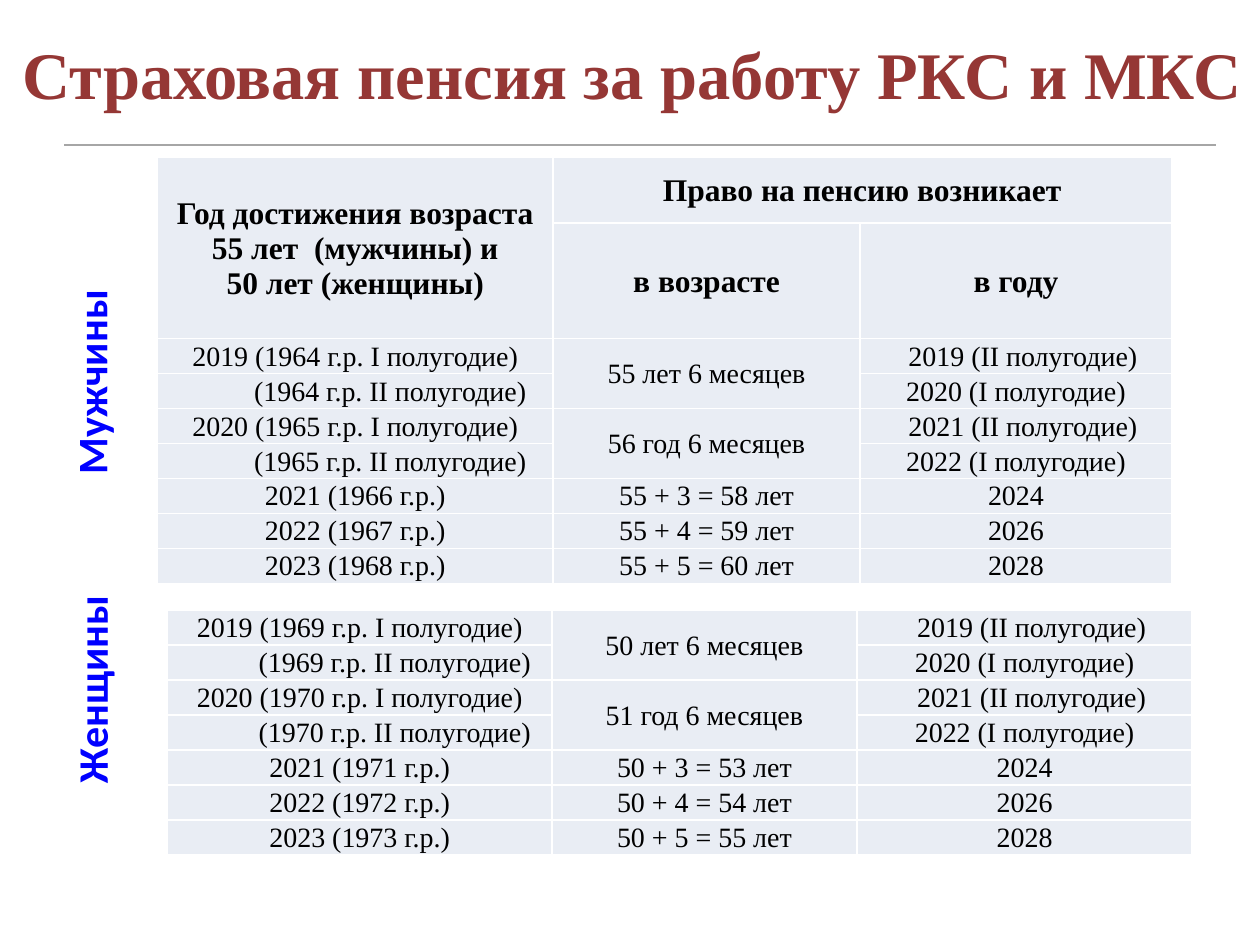
import lxml.etree
import pptx
import pptx.dml.color
import pptx.enum.shapes
import pptx.enum.text
import pptx.oxml.ns
import pptx.util

Pt = pptx.util.Pt
SERIF = "Times New Roman"
TITLE = "Страховая пенсия за работу РКС и МКС"
HEADER = [
    ("Год достижения возраста\n55 лет  (мужчины) и\n50 лет (женщины)", "Право на пенсию возникает", ""),
    ("", "в возрасте", "в году"),
]
MEN = [
    ("2019 (1964 г.р. I полугодие)", "55 лет 6 месяцев", "2019 (II полугодие)"),
    ("(1964 г.р. II полугодие)", "", "2020 (I полугодие)"),
    ("2020 (1965 г.р. I полугодие)", "56 год 6 месяцев", "2021 (II полугодие)"),
    ("(1965 г.р. II полугодие)", "", "2022 (I полугодие)"),
    ("2021 (1966 г.р.)", "55 + 3 = 58 лет", "2024"),
    ("2022 (1967 г.р.)", "55 + 4 = 59 лет", "2026"),
    ("2023 (1968 г.р.)", "55 + 5 = 60 лет", "2028"),
]
WOMEN = [
    ("2019 (1969 г.р. I полугодие)", "50 лет 6 месяцев", "2019 (II полугодие)"),
    ("(1969 г.р. II полугодие)", "", "2020 (I полугодие)"),
    ("2020 (1970 г.р. I полугодие)", "51 год 6 месяцев", "2021 (II полугодие)"),
    ("(1970 г.р. II полугодие)", "", "2022 (I полугодие)"),
    ("2021 (1971 г.р.)", "50 + 3 = 53 лет", "2024"),
    ("2022 (1972 г.р.)", "50 + 4 = 54 лет", "2026"),
    ("2023 (1973 г.р.)", "50 + 5 = 55 лет", "2028"),
]
HEADER_HEIGHTS = [37.5, 66]
ROW_HEIGHT = 20
TABLES = [
    {"left": 90, "top": 90, "widths": [226, 175.6, 178], "header": HEADER, "body": MEN},
    {"left": 95.8, "top": 348.7, "widths": [219.5, 174.5, 191.5], "header": [], "body": WOMEN},
]
SIDE_LABELS = [("Мужчины", -8.64, 199.5, 121), ("Женщины", -9.36, 375, 123)]


def color(value):
    return pptx.dml.color.RGBColor.from_string(value)


def style(paragraph, size, face, ink, bold):
    font = paragraph.font
    font.size, font.name, font.bold = Pt(size), face, bold
    font.color.rgb = color(ink)


def add_borders(cell):
    properties = cell._tc.get_or_add_tcPr()
    qn = pptx.oxml.ns.qn
    for side in ("a:lnL", "a:lnR", "a:lnT", "a:lnB"):
        border = lxml.etree.SubElement(properties, qn(side), w=str(Pt(1)))
        fill = lxml.etree.SubElement(border, qn("a:solidFill"))
        lxml.etree.SubElement(fill, qn("a:srgbClr"), val="FFFFFF")


def indent(text):
    if text.startswith("("):
        return 40
    return 8 if text.endswith("(II полугодие)") else 0


def fill_cell(cell, text, is_header):
    add_borders(cell)
    cell.fill.solid()
    cell.fill.fore_color.rgb = color("E9EDF4")
    cell.vertical_anchor = pptx.enum.text.MSO_ANCHOR.MIDDLE
    cell.margin_left = Pt(0.7 + indent(text))
    cell.margin_right = cell.margin_top = Pt(0.7)
    cell.margin_bottom = Pt(0)
    paragraph = cell.text_frame.paragraphs[0]
    paragraph.text = text
    paragraph.alignment = pptx.enum.text.PP_ALIGN.CENTER
    style(paragraph, 18 if is_header else 16, SERIF, "000000", is_header)


def add_pension_table(slide, left, top, widths, header, body):
    rows = header + body
    heights = HEADER_HEIGHTS[:len(header)] + [ROW_HEIGHT] * len(body)
    table = slide.shapes.add_table(
        len(rows), len(widths), Pt(left), Pt(top), Pt(sum(widths)), Pt(sum(heights))).table
    table.first_row = table.horz_banding = False
    for column, width in zip(table.columns, widths):
        column.width = Pt(width)
    for r, (texts, height) in enumerate(zip(rows, heights)):
        table.rows[r].height = Pt(height)
        for c, text in enumerate(texts):
            fill_cell(table.cell(r, c), text, r < len(header))
    if header:
        table.cell(0, 0).merge(table.cell(1, 0))
        table.cell(0, 1).merge(table.cell(0, 2))
    for r in (len(header), len(header) + 2):
        table.cell(r, 1).merge(table.cell(r + 1, 1))


def add_divider(slide):
    divider = slide.shapes.add_connector(
        pptx.enum.shapes.MSO_CONNECTOR.STRAIGHT, Pt(36.7), Pt(82.8), Pt(694.8), Pt(82.8))
    divider.line.color.rgb = color("A6A6A6")
    divider.line.width = Pt(1.5)
    lxml.etree.SubElement(divider._element.spPr, pptx.oxml.ns.qn("a:effectLst"))


def add_title(slide):
    title = slide.shapes.title
    title.left, title.top, title.width, title.height = Pt(1.44), Pt(15.1), Pt(720), Pt(53.3)
    title.text_frame.auto_size = pptx.enum.text.MSO_AUTO_SIZE.NONE
    heading = title.text_frame.paragraphs[0]
    heading.text = TITLE
    heading.alignment = pptx.enum.text.PP_ALIGN.CENTER
    style(heading, 38, SERIF, "953735", True)


def add_side_label(slide, text, left, top, width):
    label = slide.shapes.add_textbox(Pt(left), Pt(top), Pt(width), Pt(36))
    label.rotation = 270
    label.text_frame.word_wrap = False
    paragraph = label.text_frame.paragraphs[0]
    paragraph.text = text
    style(paragraph, 24, "Calibri", "0000FF", True)


def main():
    deck = pptx.Presentation()
    deck.slide_width, deck.slide_height = Pt(720), Pt(540)
    slide = deck.slides.add_slide(deck.slide_layouts[5])
    add_divider(slide)
    add_title(slide)
    for side_label in SIDE_LABELS:
        add_side_label(slide, *side_label)
    for pension_table in TABLES:
        add_pension_table(slide, **pension_table)
    deck.save("out.pptx")


if __name__ == "__main__":
    main()
